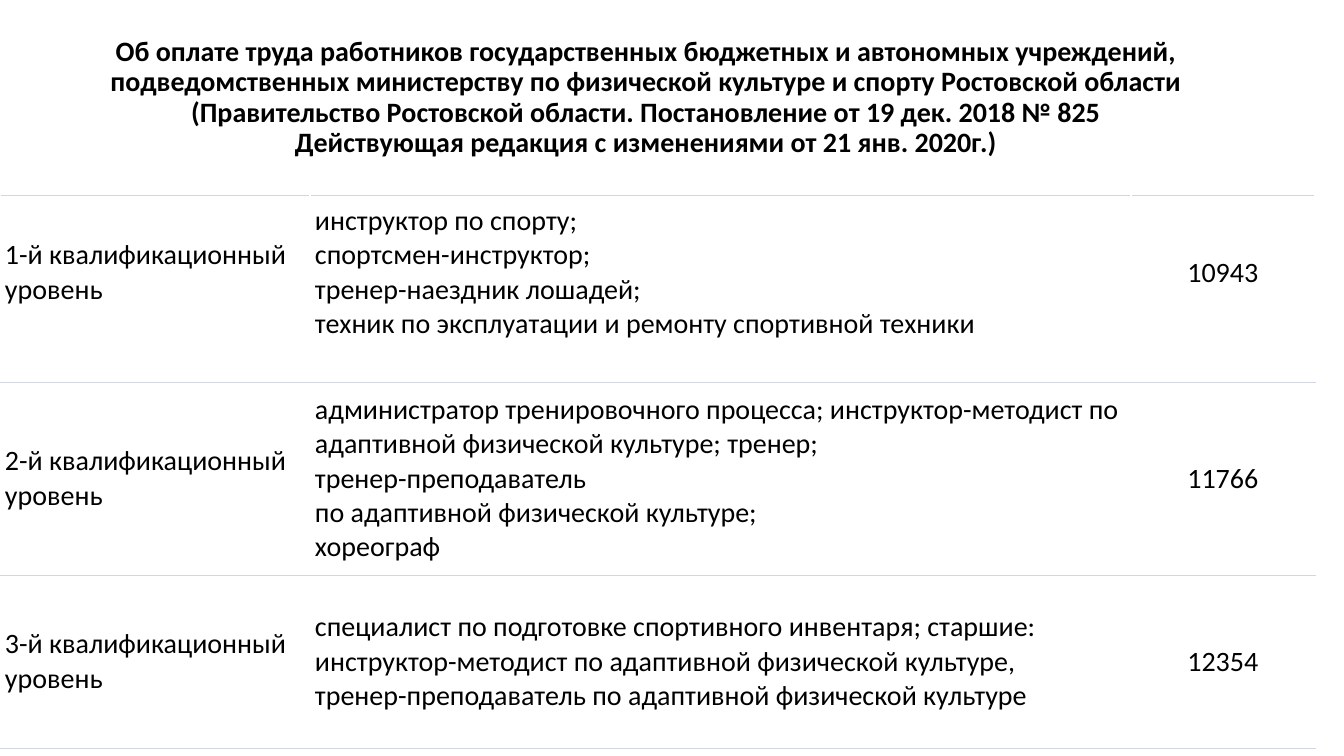
"""Builds a slide with a table of pay rates by qualification level."""
from lxml.etree import SubElement
from pptx import Presentation
from pptx.dml.color import RGBColor
from pptx.enum.text import MSO_ANCHOR as Anchor, PP_ALIGN as Align
from pptx.oxml import parse_xml
from pptx.oxml.ns import nsdecls, qn
from pptx.util import Emu, Pt

BLACK = RGBColor(0x00, 0x00, 0x00)
WHITE = RGBColor(0xFF, 0xFF, 0xFF)
RULE = RGBColor(0xD1, 0xD7, 0xE1)
FONT = {"name": "Calibri", "size": Pt(20), "bold": False}
TITLE = [
    "Об оплате труда работников государственных бюджетных и автономных учреждений, "
    "подведомственных министерству по физической культуре и спорту Ростовской области "
    "(Правительство Ростовской области. Постановление от 19 дек. 2018 № 825",
    "Действующая редакция с изменениями от 21 янв. 2020г.)",
]
COLUMN_WIDTHS = [310, 821, 184]
ROW_HEIGHTS = [187, 193, 173]
BOTTOM_MARGINS = [40, 8, 8]
LEVELS = [
    (["инструктор по спорту;", "спортсмен-инструктор;", "тренер-наездник лошадей;",
      "техник по эксплуатации и ремонту спортивной техники"], "10943"),
    (["администратор тренировочного процесса; инструктор-методист по "
      "адаптивной физической культуре; тренер;", "тренер-преподаватель",
      "по адаптивной физической культуре;", "хореограф"], "11766"),
    (["специалист по подготовке спортивного инвентаря; старшие: "
      "инструктор-методист по адаптивной физической культуре,",
      "тренер-преподаватель по адаптивной физической культуре"], "12354"),
]


def px(length):
    """Turn pixels into EMU."""
    return Emu(round(length * 914400 / 100.8))


def apply(target, formats):
    """Set each attribute of the target from a dict."""
    for name, value in formats.items():
        setattr(target, name, value)


def write_lines(frame, lines, align, bold=False, spacing=1.0):
    """Fill a text frame with one paragraph of broken lines."""
    para = frame.paragraphs[0]
    apply(para, {"alignment": align, "line_spacing": spacing})
    for index, line in enumerate(lines):
        if index:
            para.add_line_break()
        span = para.add_run()
        span.text = line
        apply(span.font, {**FONT, "bold": bold})
        span.font.color.rgb = BLACK
    for line_break in para._p.findall(qn("a:br")):
        SubElement(line_break, qn("a:rPr"), sz="2000")


def add_rules(cell):
    """Draw thin lines along the top and bottom of a cell."""
    properties = cell._tc.get_or_add_tcPr()
    for index, side in enumerate(("lnT", "lnB")):
        properties.insert(index, parse_xml(
            f'<a:{side} {nsdecls("a")} w="7620"><a:solidFill>'
            f'<a:srgbClr val="{RULE}"/></a:solidFill></a:{side}>'))


def fill_cell(cell, lines, align, bottom):
    """Format a cell and write its lines."""
    apply(cell, {"vertical_anchor": Anchor.MIDDLE, "margin_left": px(5),
                 "margin_right": px(5), "margin_top": px(8), "margin_bottom": px(bottom)})
    cell.fill.solid()
    cell.fill.fore_color.rgb = WHITE
    add_rules(cell)
    write_lines(cell.text_frame, lines, align)


def add_title(page):
    """Place and write the title."""
    title = page.shapes.title
    apply(title, {"left": px(41), "top": px(26), "width": px(1210), "height": px(144)})
    apply(title.text_frame, {"vertical_anchor": Anchor.MIDDLE, "word_wrap": True})
    write_lines(title.text_frame, TITLE, Align.CENTER, bold=True, spacing=0.9)


def add_rates(page):
    """Add the table of levels, posts and rates."""
    table = page.shapes.add_table(
        len(LEVELS), len(COLUMN_WIDTHS), px(0), px(195),
        px(sum(COLUMN_WIDTHS)), px(sum(ROW_HEIGHTS))).table
    apply(table, {"first_row": False, "horz_banding": False})
    for column, width in zip(table.columns, COLUMN_WIDTHS):
        column.width = px(width)
    for number, (row, height, bottom, (posts, rate)) in enumerate(
            zip(table.rows, ROW_HEIGHTS, BOTTOM_MARGINS, LEVELS), 1):
        row.height = px(height)
        level = [f"{number}-й квалификационный уровень"]
        contents = [(level, Align.LEFT), (posts, Align.LEFT), ([rate], Align.CENTER)]
        for cell, (lines, align) in zip(row.cells, contents):
            fill_cell(cell, lines, align, bottom)


def main():
    """Build and save the deck."""
    deck = Presentation()
    apply(deck, {"slide_width": px(1344), "slide_height": px(756)})
    page = deck.slides.add_slide(deck.slide_layouts[5])
    add_title(page)
    add_rates(page)
    deck.save("out.pptx")


if __name__ == "__main__":
    main()
